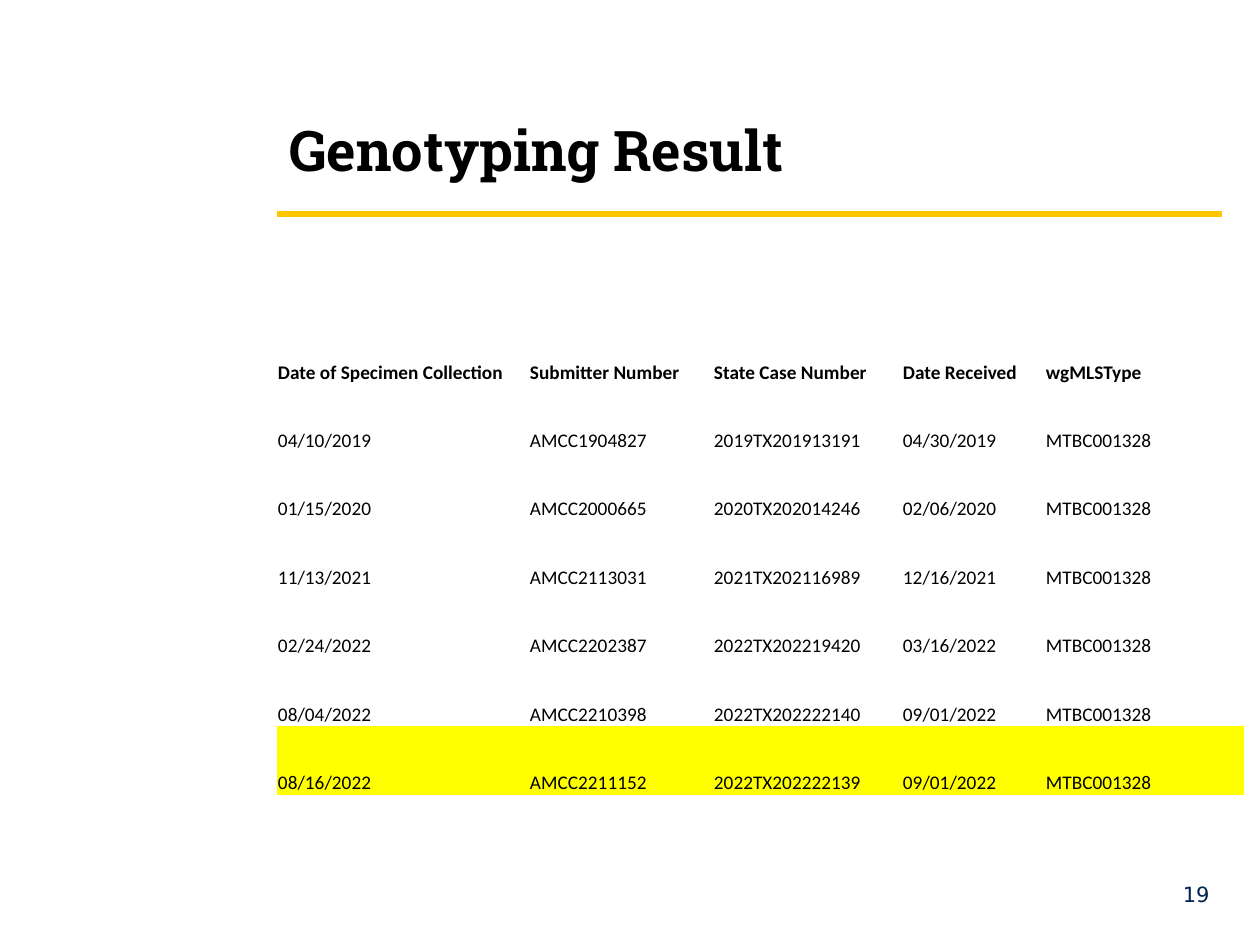
from pptx import Presentation
from pptx.dml.color import RGBColor
from pptx.enum.shapes import MSO_CONNECTOR
from pptx.enum.text import MSO_ANCHOR, PP_ALIGN
from pptx.oxml.ns import qn
from pptx.util import Emu, Pt
from lxml.etree import SubElement

BLACK = RGBColor(0x00, 0x00, 0x00)
NAVY = RGBColor(0x02, 0x21, 0x51)
GOLD = RGBColor(0xFF, 0xC6, 0x00)
YELLOW = RGBColor(0xFF, 0xFF, 0x00)

PX_PER_INCH = 126
NO_GRID_STYLE = "{2D5ABB26-0587-4C30-8999-92F81FD0307C}"

TITLE_FONT = {"name": "Roboto Slab", "size": Pt(32), "bold": True}
CELL_FONT = {"name": "Calibri", "size": Pt(11)}
NUMBER_FONT = {"name": "DejaVu Sans", "size": Pt(12)}

COLUMN_WIDTHS = [252, 184, 189, 143, 199]
HEADERS = ["Date of Specimen Collection", "Submitter Number", "State Case Number",
           "Date Received", "wgMLSType"]
WGMLS_TYPE = "MTBC001328"
SPECIMENS = [
    ("04/10/2019", "AMCC1904827", "2019TX201913191", "04/30/2019"),
    ("01/15/2020", "AMCC2000665", "2020TX202014246", "02/06/2020"),
    ("11/13/2021", "AMCC2113031", "2021TX202116989", "12/16/2021"),
    ("02/24/2022", "AMCC2202387", "2022TX202219420", "03/16/2022"),
    ("08/04/2022", "AMCC2210398", "2022TX202222140", "09/01/2022"),
    ("08/16/2022", "AMCC2211152", "2022TX202222139", "09/01/2022"),
]


def px(n):
    return Emu(round(n * 914400 / PX_PER_INCH))


def set_text(tf, text, font, color, align=PP_ALIGN.LEFT):
    p = tf.paragraphs[0]
    p.alignment = align
    r = p.add_run()
    r.text = text
    for name, value in font.items():
        setattr(r.font, name, value)
    r.font.color.rgb = color


def add_text(s, x, y, w, h, text, font, color, anchor, align=PP_ALIGN.LEFT):
    tf = s.shapes.add_textbox(px(x), px(y), px(w), px(h)).text_frame
    tf.word_wrap = True
    tf.vertical_anchor = anchor
    set_text(tf, text, font, color, align)


def add_heading(s, x, y, w, h):
    """Title sitting above a gold rule on the bottom edge of the box."""
    rule = s.shapes.add_connector(MSO_CONNECTOR.STRAIGHT,
                                  px(x), px(y + h), px(x + w), px(y + h))
    rule.line.color.rgb = GOLD
    rule.line.width = Pt(3)
    SubElement(rule._element.spPr, qn("a:effectLst"))
    add_text(s, x, y, w, h - 25, "Genotyping Result", TITLE_FONT, BLACK,
             MSO_ANCHOR.BOTTOM)


def add_results(s, x, y, w, h):
    """Specimen table with the latest specimen highlighted."""
    rows = [HEADERS] + [(*specimen, WGMLS_TYPE) for specimen in SPECIMENS]
    frame = s.shapes.add_table(len(rows), len(HEADERS), px(x), px(y), px(w), px(h))
    table = frame.table
    table.first_row = table.horz_banding = False
    table._tbl.tblPr.find(qn("a:tableStyleId")).text = NO_GRID_STYLE
    for column, width in zip(table.columns, COLUMN_WIDTHS):
        column.width = px(width)
    for i, row in enumerate(rows):
        for j, text in enumerate(row):
            cell = table.cell(i, j)
            cell.margin_left = cell.margin_right = cell.margin_top = px(1)
            cell.margin_bottom = 0
            cell.vertical_anchor = MSO_ANCHOR.BOTTOM
            if i == len(rows) - 1:
                cell.fill.solid()
                cell.fill.fore_color.rgb = YELLOW
            else:
                cell.fill.background()
            set_text(cell.text_frame, text, {**CELL_FONT, "bold": i == 0}, BLACK)


def main():
    prs = Presentation()
    prs.slide_width, prs.slide_height = px(1260), px(945)
    s = prs.slides.add_slide(prs.slide_layouts[6])
    add_heading(s, 277, 38, 945, 176)
    add_results(s, 277, 316, sum(COLUMN_WIDTHS), 479)
    add_text(s, 1096, 869, 126, 50, "19", NUMBER_FONT, NAVY,
             MSO_ANCHOR.MIDDLE, PP_ALIGN.RIGHT)
    prs.save("out.pptx")


if __name__ == "__main__":
    main()
